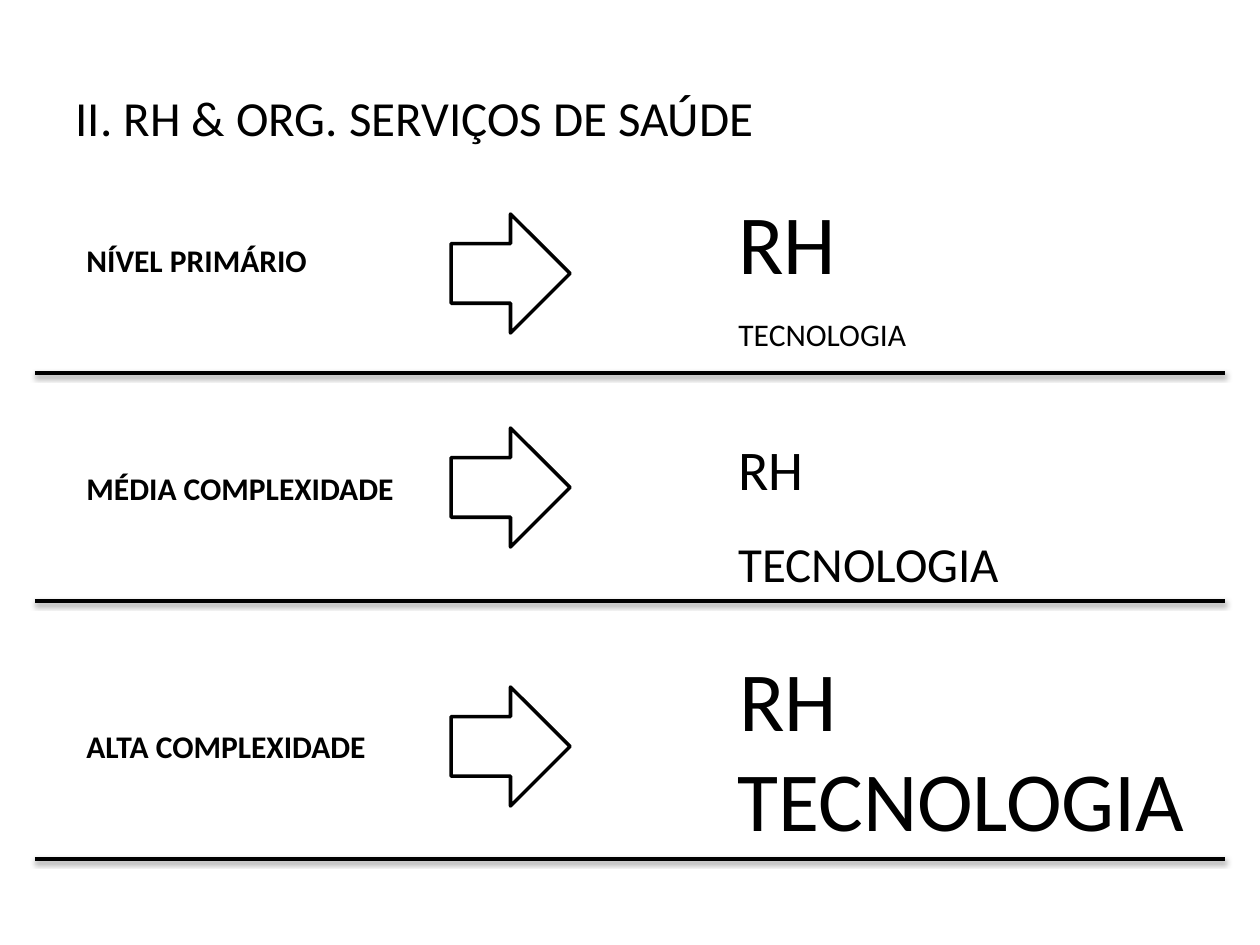
from dataclasses import dataclass

from lxml.etree import SubElement
from pptx import Presentation
from pptx.dml.color import RGBColor
from pptx.enum.shapes import MSO_CONNECTOR as Connector, MSO_SHAPE as Shape
from pptx.enum.text import MSO_ANCHOR as Anchor, MSO_AUTO_SIZE as AutoSize, PP_ALIGN as Align
from pptx.oxml.ns import qn
from pptx.slide import Slide
from pptx.util import Emu, Pt

COLORS = {"ink": "000000"}
FONT = "Calibri"
PX_PER_INCH = 126
LINE_WIDTH = Pt(2)
LINE_LEFT, LINE_RIGHT = 35, 1225
LABEL_LEFT, LABEL_RISE = 74, 138
ARROW_LEFT, ARROW_SIZE = 451, 119
TEXT_HEIGHTS = {18: 50, 28: 72, 32: 81, 48: 115}


@dataclass(frozen=True)
class Caption:
    text: str
    left: int
    top: int
    width: int
    size: int
    bold: bool = False


@dataclass(frozen=True)
class Level:
    name: str
    name_width: int
    line_top: int
    arrow_top: int
    staff: Caption
    technology: Caption


LEVELS = [
    Level("NÍVEL PRIMÁRIO", 248, 373, 214,
          Caption("RH", 726, 184, 125, 48),
          Caption("TECNOLOGIA", 726, 309, 195, 18)),
    Level("MÉDIA COMPLEXIDADE", 335, 601, 428,
          Caption("RH", 726, 428, 92, 32),
          Caption("TECNOLOGIA", 726, 527, 289, 28)),
    Level("ALTA COMPLEXIDADE", 307, 859, 687,
          Caption("RH", 727, 641, 125, 48),
          Caption("TECNOLOGIA", 725, 741, 478, 48)),
]


def px(length: int) -> Emu:
    return Emu(round(length * 914400 / PX_PER_INCH))


def ink() -> RGBColor:
    return RGBColor.from_string(COLORS["ink"])


def add_span(para, text: str, size: int, bold: bool = False) -> None:
    span = para.add_run()
    span.text = text
    span.font.name = FONT
    span.font.size = Pt(size)
    span.font.bold = bold
    span.font.color.rgb = ink()


def set_title(page: Slide, text: str) -> None:
    title = page.shapes.title
    title.left, title.top = px(63), px(38)
    title.width, title.height = px(1134), px(158)
    title.text_frame.vertical_anchor = Anchor.MIDDLE
    para = title.text_frame.paragraphs[0]
    para.alignment = Align.LEFT
    add_span(para, text, 28)


def add_caption(page: Slide, caption: Caption) -> None:
    box = page.shapes.add_textbox(px(caption.left), px(caption.top), px(caption.width),
                                  px(TEXT_HEIGHTS[caption.size]))
    box.text_frame.word_wrap = False
    box.text_frame.auto_size = AutoSize.SHAPE_TO_FIT_TEXT
    add_span(box.text_frame.paragraphs[0], caption.text, caption.size, caption.bold)


def add_divider(page: Slide, top: int) -> None:
    divider = page.shapes.add_connector(Connector.STRAIGHT, px(LINE_LEFT), px(top),
                                        px(LINE_RIGHT), px(top))
    divider.line.color.rgb = ink()
    divider.line.width = LINE_WIDTH
    effects = SubElement(divider._element.spPr, qn("a:effectLst"))
    shadow = SubElement(effects, qn("a:outerShdw"), blurRad=str(Pt(3.1)), dist=str(Pt(1.6)),
                        dir="5400000", rotWithShape="0")
    color = SubElement(shadow, qn("a:srgbClr"), val=COLORS["ink"])
    SubElement(color, qn("a:alpha"), val="38000")


def add_arrow(page: Slide, top: int) -> None:
    arrow = page.shapes.add_shape(Shape.RIGHT_ARROW, px(ARROW_LEFT), px(top),
                                  px(ARROW_SIZE), px(ARROW_SIZE))
    arrow.shadow.inherit = False
    arrow.fill.background()
    arrow.line.color.rgb = ink()
    arrow.line.width = LINE_WIDTH
    SubElement(arrow.line._ln, qn("a:round"))


def add_level(page: Slide, level: Level) -> None:
    add_caption(page, Caption(level.name, LABEL_LEFT, level.line_top - LABEL_RISE,
                              level.name_width, 18, True))
    add_divider(page, level.line_top)
    add_arrow(page, level.arrow_top)
    add_caption(page, level.staff)
    add_caption(page, level.technology)


def main() -> None:
    deck = Presentation()
    deck.slide_width, deck.slide_height = px(1260), px(945)
    page = deck.slides.add_slide(deck.slide_layouts.get_by_name("Title Only"))
    set_title(page, "II. RH & ORG. SERVIÇOS DE SAÚDE")
    for level in LEVELS:
        add_level(page, level)
    deck.save("out.pptx")


if __name__ == "__main__":
    main()
